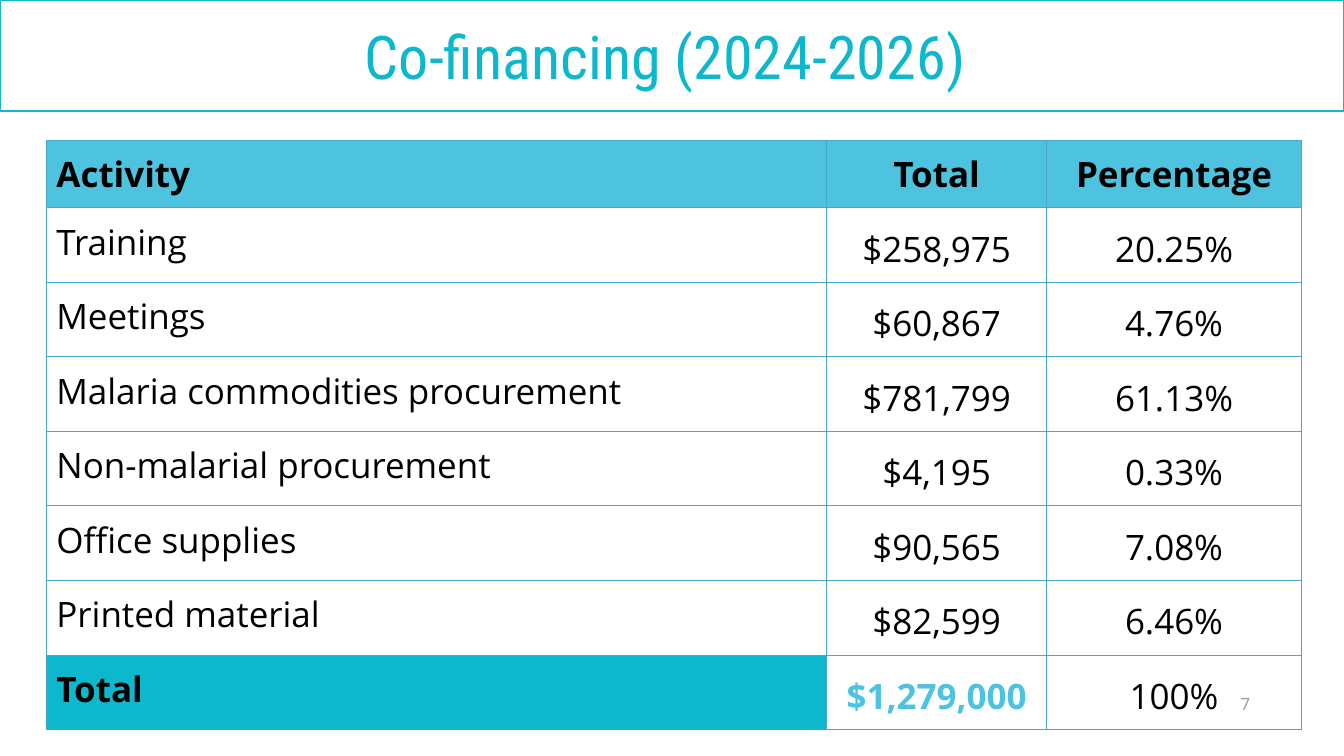
import pptx
import pptx.dml.color
import pptx.enum.shapes
import pptx.enum.text
import pptx.oxml
import pptx.oxml.ns
import pptx.util
from pptx.util import Inches

ALIGN = pptx.enum.text.PP_ALIGN
ANCHOR = pptx.enum.text.MSO_ANCHOR
TEAL, SKY, BORDER, BLACK, GREY = "0DB8CC", "4EC3E0", "46A7D0", "000000", "97999B"
COLUMN_WIDTHS = (7.74, 2.18, 2.53)
HEADER_HEIGHT, ROW_HEIGHT = 0.67, 0.74
COFINANCING = (
    ("Activity", "Total", "Percentage"),
    ("Training", "$258,975", "20.25%"),
    ("Meetings", "$60,867", "4.76%"),
    ("Malaria commodities procurement", "$781,799", "61.13%"),
    ("Non-malarial procurement", "$4,195", "0.33%"),
    ("Office supplies", "$90,565", "7.08%"),
    ("Printed material", "$82,599", "6.46%"),
    ("Total", "$1,279,000", "100%"),
)


def rgb(value):
    """Turn a hex string into a colour."""
    return pptx.dml.color.RGBColor.from_string(value)


def set_values(target, values):
    """Set each named attribute on the target."""
    for name, value in values.items():
        setattr(target, name, value)


def set_margins(target, horizontal, vertical):
    """Set the inner margins of a text frame or a cell."""
    set_values(target, {
        "margin_left": Inches(horizontal), "margin_right": Inches(horizontal),
        "margin_top": Inches(vertical), "margin_bottom": Inches(vertical),
    })


def write(frame, text, size, colour, align, font="Open Sans", bold=False, spacing=None):
    """Write one formatted paragraph into a text frame."""
    para = frame.paragraphs[0]
    set_values(para, {"alignment": align, "line_spacing": spacing})
    span = para.add_run()
    span.text = text
    set_values(span.font, {"name": font, "size": pptx.util.Pt(size), "bold": bold})
    span.font.color.rgb = rgb(colour)


def add_page_number(page, number):
    """Add the page number at the lower right."""
    box = page.shapes.add_textbox(Inches(12.03), Inches(6.81), Inches(0.37), Inches(0.27))
    frame = box.text_frame
    set_margins(frame, 0, 0)
    set_values(frame, {"word_wrap": True, "vertical_anchor": ANCHOR.BOTTOM})
    write(frame, number, 12, GREY, ALIGN.RIGHT)


def add_title(page, text):
    """Add the outlined title bar across the top."""
    bar = page.shapes.add_shape(
        pptx.enum.shapes.MSO_SHAPE.RECTANGLE, 0, 0, Inches(13.33), Inches(1.1))
    bar.shadow.inherit = False
    bar.fill.background()
    bar.line.color.rgb = rgb(TEAL)
    bar.line.width = pptx.util.Pt(1.5)
    frame = bar.text_frame
    set_margins(frame, 0.1, 0.05)
    set_values(frame, {"word_wrap": True, "vertical_anchor": ANCHOR.MIDDLE})
    write(frame, text, 43, TEAL, ALIGN.CENTER, font="Roboto Condensed")


def set_borders(cell):
    """Draw a thin line on all four sides of a cell."""
    properties = cell._tc.get_or_add_tcPr()
    for index, side in enumerate(("lnL", "lnR", "lnT", "lnB")):
        properties.insert(index, pptx.oxml.parse_xml(
            f'<a:{side} {pptx.oxml.ns.nsdecls("a")} w="{pptx.util.Pt(0.75)}">'
            f'<a:solidFill><a:srgbClr val="{BORDER}"/></a:solidFill></a:{side}>'))


def format_cell(cell, fill):
    """Give a cell its margins, fill and borders."""
    set_margins(cell, 0.1, 0.1)
    if fill:
        cell.fill.solid()
        cell.fill.fore_color.rgb = rgb(fill)
    else:
        cell.fill.background()
    set_borders(cell)


def add_cofinancing_table(page, rows):
    """Add the table with its header and total rows."""
    last = len(rows) - 1
    height = HEADER_HEIGHT + last * ROW_HEIGHT
    grid = page.shapes.add_table(
        len(rows), len(COLUMN_WIDTHS), Inches(0.46), Inches(1.39),
        Inches(sum(COLUMN_WIDTHS)), Inches(height)).table
    set_values(grid, {"first_row": False, "horz_banding": False})
    for column, width in zip(grid.columns, COLUMN_WIDTHS):
        column.width = Inches(width)
    for r, values in enumerate(rows):
        grid.rows[r].height = Inches(ROW_HEIGHT if r else HEADER_HEIGHT)
        for c, text in enumerate(values):
            cell = grid.cell(r, c)
            is_total_label = r == last and c == 0
            is_total_amount = r == last and c == 1
            format_cell(cell, SKY if r == 0 else TEAL if is_total_label else None)
            write(cell.text_frame, text, 25, SKY if is_total_amount else BLACK,
                  ALIGN.CENTER if c else ALIGN.LEFT,
                  bold=r == 0 or is_total_label or is_total_amount,
                  spacing=1.15 if r and c else None)


def main():
    """Build the co-financing slide and save it."""
    deck = pptx.Presentation()
    set_values(deck, {"slide_width": Inches(13.33), "slide_height": Inches(7.5)})
    page = deck.slides.add_slide(deck.slide_layouts[6])
    add_page_number(page, "7")
    add_title(page, "Co-financing (2024-2026) ")
    add_cofinancing_table(page, COFINANCING)
    deck.save("out.pptx")


if __name__ == "__main__":
    main()
